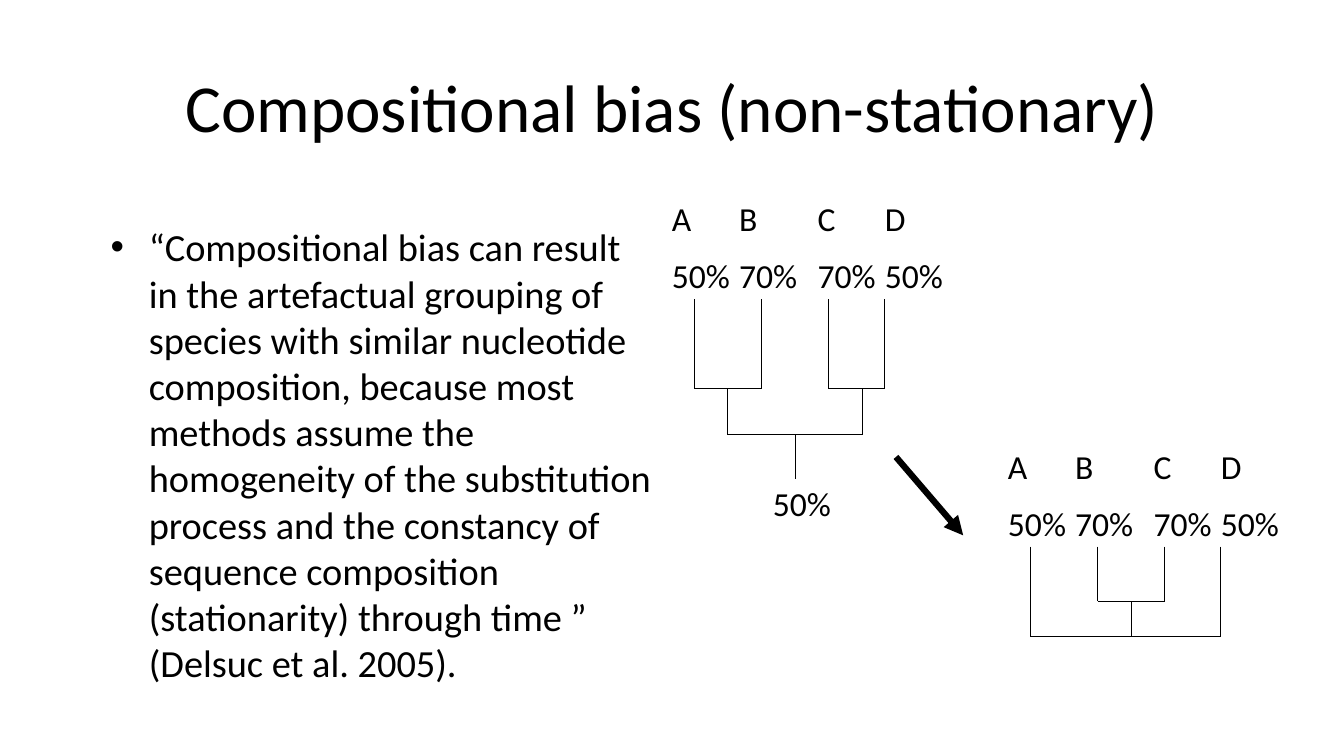
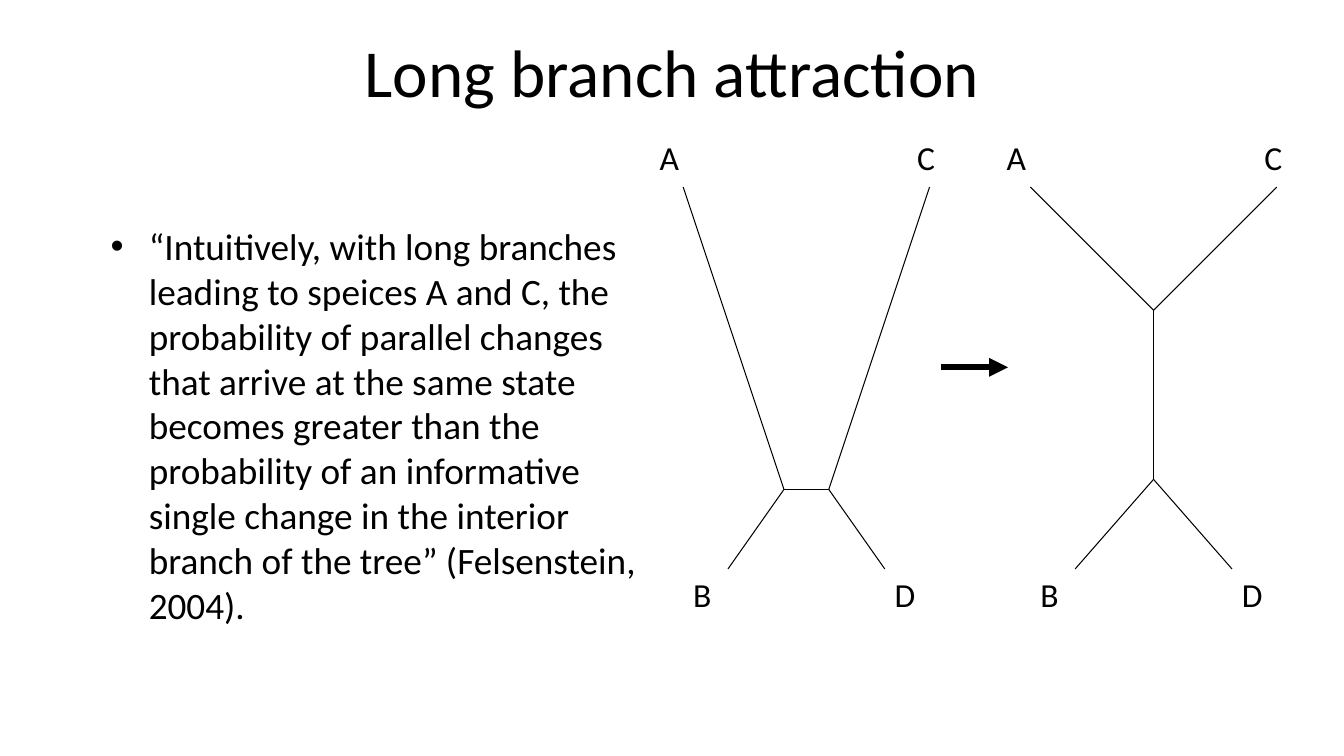
from lxml import etree
from pptx import Presentation
from pptx.dml.color import RGBColor
from pptx.enum.shapes import MSO_CONNECTOR
from pptx.enum.text import MSO_ANCHOR, PP_ALIGN
from pptx.oxml.ns import qn
from pptx.util import Emu, Pt

PX = 10160  # EMU per px, 90 px to the inch
FONT, INK = "Calibri", "000000"
STRAIGHT = MSO_CONNECTOR.STRAIGHT
LEFT, CENTER = PP_ALIGN.LEFT, PP_ALIGN.CENTER
TOP, MIDDLE = MSO_ANCHOR.TOP, MSO_ANCHOR.MIDDLE
THIN, THICK = 0.75, 4.5
MARGIN, TITLE_WIDTH = 90, 1020
BODY_TOP, BODY_WIDTH = 195, 500
BULLET_INDENT = 34

# Content: slide 1
BIAS = {
    "title": "Compositional bias (non-stationary)",
    "title_top": 38, "title_height": 112,
    "body": "“Compositional bias can result in the artefactual grouping of species "
            "with similar nucleotide composition, because most methods assume the "
            "homogeneity of the substitution process and the constancy of sequence "
            "composition (stationarity) through time ” (Delsuc et al. 2005).",
    "body_height": 444, "body_size": 27.4, "line_pitch": 33,
    "arrow": (800, 408, 860, 478),
}
# Species label: name, share, x within its tree
SPECIES = [("A", "50%", 0), ("B", "70%", 60), ("C", "70%", 130), ("D", "50%", 190)]
LABEL_WIDTH, LABEL_HEIGHT = 60, 91
TIPS = (20, 80, 140, 190)
TIP_Y = 90
# Each tree: origin, fork (left x, left top, right x, right top, bar y), stem (x, top, bottom)
ROOTED_TREES = [
    {"origin": (600, 177),
     "forks": [(TIPS[0], TIP_Y, TIPS[1], TIP_Y, 170),
               (TIPS[2], TIP_Y, TIPS[3], TIP_Y, 170),
               (50, 170, 170, 170, 211)],
     "stem": (110, 211, 251)},
    {"origin": (900, 398),
     "forks": [(TIPS[1], TIP_Y, TIPS[2], TIP_Y, 139),
               (TIPS[0], TIP_Y, TIPS[3], TIP_Y, 170)],
     "stem": (110, 139, 170)},
]
ROOT_LABEL = ("50%", 690, 431, 60, 36)

# Content: slide 2
ATTRACTION = {
    "title": "Long branch attraction",
    "title_top": 22, "title_height": 83,
    "body": "“Intuitively, with long branches leading to speices A and C, the "
            "probability of parallel changes that arrive at the same state becomes "
            "greater than the probability of an informative single change in the "
            "interior branch of the tree” (Felsenstein, 2004).",
    "body_height": 405, "body_size": 26.6, "line_pitch": 32,
    "arrow": (840, 328, 900, 328),
}
# Species: label corner and branch tip, shared by both unrooted trees
UNROOTED_TIPS = {
    "A": ((580, 118), (610, 167)),
    "B": ((610, 508), (650, 508)),
    "C": ((810, 118), (830, 167)),
    "D": ((790, 508), (790, 508)),
}
# Each tree: shift to the right, two inner nodes with the species on each
UNROOTED_TREES = [
    (0, [((700, 437), "AB"), ((740, 437), "CD")]),
    (310, [((720, 277), "AC"), ((720, 428), "BD")]),
]


def px(value):
    return Emu(round(value * PX))


def color(hex_string):
    return RGBColor.from_string(hex_string)


def add_text(slide, paragraphs, left, top, width, height, size=24, align=LEFT,
             anchor=TOP, inset=None, before=0, pitch=None, bullet=False):
    shape = slide.shapes.add_textbox(px(left), px(top), px(width), px(height))
    frame = shape.text_frame
    frame.word_wrap = True
    frame.vertical_anchor = anchor
    if inset is not None:
        frame.margin_left = frame.margin_right = px(inset)
        frame.margin_top = frame.margin_bottom = px(inset)
    for index, text in enumerate(paragraphs):
        paragraph = frame.add_paragraph() if index else frame.paragraphs[0]
        paragraph.alignment = align
        paragraph.space_before = Pt(before)
        if pitch:
            paragraph.line_spacing = Pt(pitch)
        run = paragraph.add_run()
        run.text = text
        run.font.name, run.font.size = FONT, Pt(size)
        run.font.color.rgb = color(INK)
        if bullet:
            properties = paragraph._p.get_or_add_pPr()
            properties.set("marL", str(px(BULLET_INDENT)))
            properties.set("indent", str(-px(BULLET_INDENT)))
            etree.SubElement(properties, qn("a:buFont")).set("typeface", "Arial")
            etree.SubElement(properties, qn("a:buChar")).set("char", "•")


def add_line(slide, x1, y1, x2, y2, weight=THIN, arrow=False):
    line = slide.shapes.add_connector(STRAIGHT, px(x1), px(y1), px(x2), px(y2))
    line.line.color.rgb = color(INK)
    line.line.width = Pt(weight)
    if arrow:
        outline = line.line._get_or_add_ln()
        etree.SubElement(outline, qn("a:tailEnd")).set("type", "triangle")
    etree.SubElement(line._element.spPr, qn("a:effectLst"))


def add_base(presentation, content):
    """Slide with its title, quotation and thick arrow."""
    slide = presentation.slides.add_slide(presentation.slide_layouts[6])
    add_text(slide, [content["title"]], MARGIN, content["title_top"], TITLE_WIDTH,
             content["title_height"], size=48, align=CENTER, anchor=MIDDLE)
    add_text(slide, [content["body"]], MARGIN, BODY_TOP, BODY_WIDTH,
             content["body_height"], size=content["body_size"], before=5.5,
             pitch=content["line_pitch"], bullet=True)
    add_line(slide, *content["arrow"], weight=THICK, arrow=True)
    return slide


def add_rooted_tree(slide, origin, forks, stem):
    x, y = origin
    for name, share, offset in SPECIES:
        add_text(slide, [name, share], x + offset, y, LABEL_WIDTH, LABEL_HEIGHT,
                 inset=0, before=12)
    for left, left_top, right, right_top, bar in forks:
        add_line(slide, x + left, y + left_top, x + left, y + bar)
        add_line(slide, x + right, y + right_top, x + right, y + bar)
        add_line(slide, x + left, y + bar, x + right, y + bar)
    stem_x, stem_top, stem_bottom = stem
    add_line(slide, x + stem_x, y + stem_top, x + stem_x, y + stem_bottom)


def add_unrooted_tree(slide, shift, nodes):
    for (node_x, node_y), names in nodes:
        for name in names:
            (label_x, label_y), (tip_x, tip_y) = UNROOTED_TIPS[name]
            add_line(slide, node_x + shift, node_y, tip_x + shift, tip_y)
            add_text(slide, [name], label_x + shift, label_y, 40, 45, before=12)
    (x1, y1), (x2, y2) = (node for node, names in nodes)
    add_line(slide, x1 + shift, y1, x2 + shift, y2)


def main():
    presentation = Presentation()
    presentation.slide_width, presentation.slide_height = px(1200), px(675)

    # Compositional bias
    slide = add_base(presentation, BIAS)
    for tree in ROOTED_TREES:
        add_rooted_tree(slide, **tree)
    text, *box = ROOT_LABEL
    add_text(slide, [text], *box, inset=0, before=12)

    # Long branch attraction
    slide = add_base(presentation, ATTRACTION)
    for shift, nodes in UNROOTED_TREES:
        add_unrooted_tree(slide, shift, nodes)

    presentation.save("out.pptx")


if __name__ == "__main__":
    main()
